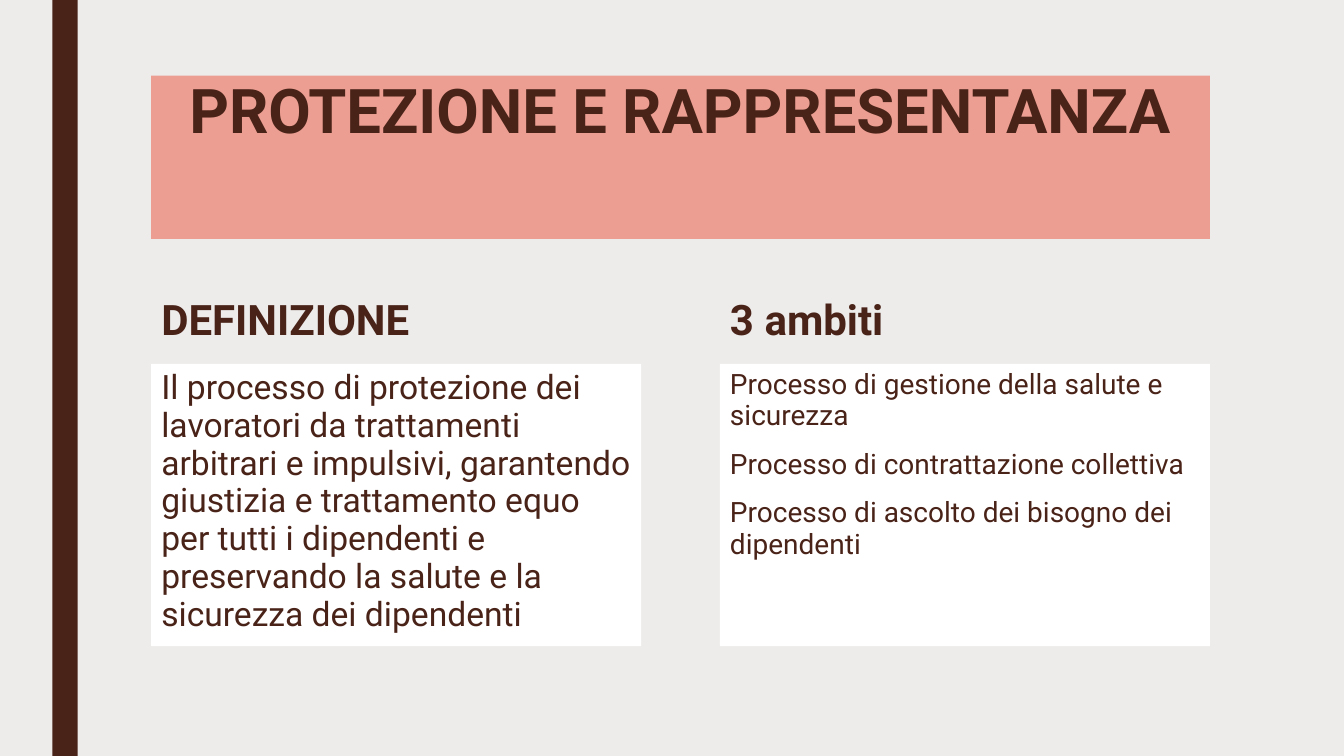
from pptx import Presentation
from pptx.dml.color import RGBColor
from pptx.enum.shapes import MSO_SHAPE
from pptx.enum.text import MSO_ANCHOR, MSO_AUTO_SIZE, PP_ALIGN
from pptx.oxml.ns import qn
from pptx.util import Inches, Pt

RECTANGLE = MSO_SHAPE.RECTANGLE
TOP, BOTTOM = MSO_ANCHOR.TOP, MSO_ANCHOR.BOTTOM
LEFT, CENTER = PP_ALIGN.LEFT, PP_ALIGN.CENTER
NO_AUTOFIT = MSO_AUTO_SIZE.NONE
COLORS = {
    "background": "EDECEB",
    "brown": "4A2318",
    "salmon": "EC9E92",
    "white": "FFFFFF",
}


def paint(fill, color):
    fill.solid()
    fill.fore_color.rgb = RGBColor.from_string(COLORS[color])


def write(holder, box, paragraphs, size, bold, spacing, anchor=TOP,
          align=LEFT, before=0, after=0, color=None):
    holder.left, holder.top, holder.width, holder.height = map(Inches, box)
    if color:
        paint(holder.fill, color)
    frame = holder.text_frame
    frame.text = "\n".join(paragraphs)
    frame.word_wrap = True
    frame.auto_size = NO_AUTOFIT
    frame.vertical_anchor = anchor
    for number, paragraph in enumerate(frame.paragraphs):
        paragraph.alignment = align
        paragraph.line_spacing = spacing
        paragraph.space_before = Pt(before if number else 0)
        paragraph.space_after = Pt(after)
        properties = paragraph._p.get_or_add_pPr()
        properties.set("marL", "0")
        properties.set("indent", "0")
        properties.append(properties.makeelement(qn("a:buNone"), {}))
        for run in paragraph.runs:
            font_format = {"name": "Roboto", "size": Pt(size), "bold": bold}
            for attribute, value in font_format.items():
                setattr(run.font, attribute, value)
            run.font.color.rgb = RGBColor.from_string(COLORS["brown"])


presentation = Presentation()
presentation.slide_width = Inches(13.33)
presentation.slide_height = Inches(7.5)
slide = presentation.slides.add_slide(presentation.slide_layouts[4])
paint(slide.background.fill, "background")

side_band = slide.shapes.add_shape(
    RECTANGLE, Inches(0.52), 0, Inches(0.25), Inches(7.5))
side_band.shadow.inherit = False
paint(side_band.fill, "brown")
side_band.line.fill.background()

write(slide.shapes.title, (1.5, 0.75, 10.5, 1.62),
      ["PROTEZIONE E RAPPRESENTANZA"], 44, True, 0.89,
      align=CENTER, color="salmon")

columns = [
    ("DEFINIZIONE", 24, [
        "Il processo di protezione dei lavoratori da trattamenti arbitrari e "
        "impulsivi, garantendo giustizia e trattamento equo per tutti i "
        "dipendenti e preservando la salute e la sicurezza dei dipendenti",
    ]),
    ("3 ambiti", 20, [
        "Processo di gestione della salute e sicurezza",
        "Processo di contrattazione collettiva",
        "Processo di ascolto dei bisogno dei dipendenti",
    ]),
]
for column, (heading, size, paragraphs) in enumerate(columns):
    left = 1.5 + 5.64 * column
    write(slide.placeholders[1 + 2 * column], (left, 2.56, 4.86, 0.9),
          [heading], 30, True, 0.84, anchor=BOTTOM)
    write(slide.placeholders[2 + 2 * column], (left, 3.61, 4.86, 2.8),
          paragraphs, size, False, 0.94, before=10, after=2, color="white")

presentation.save("out.pptx")
